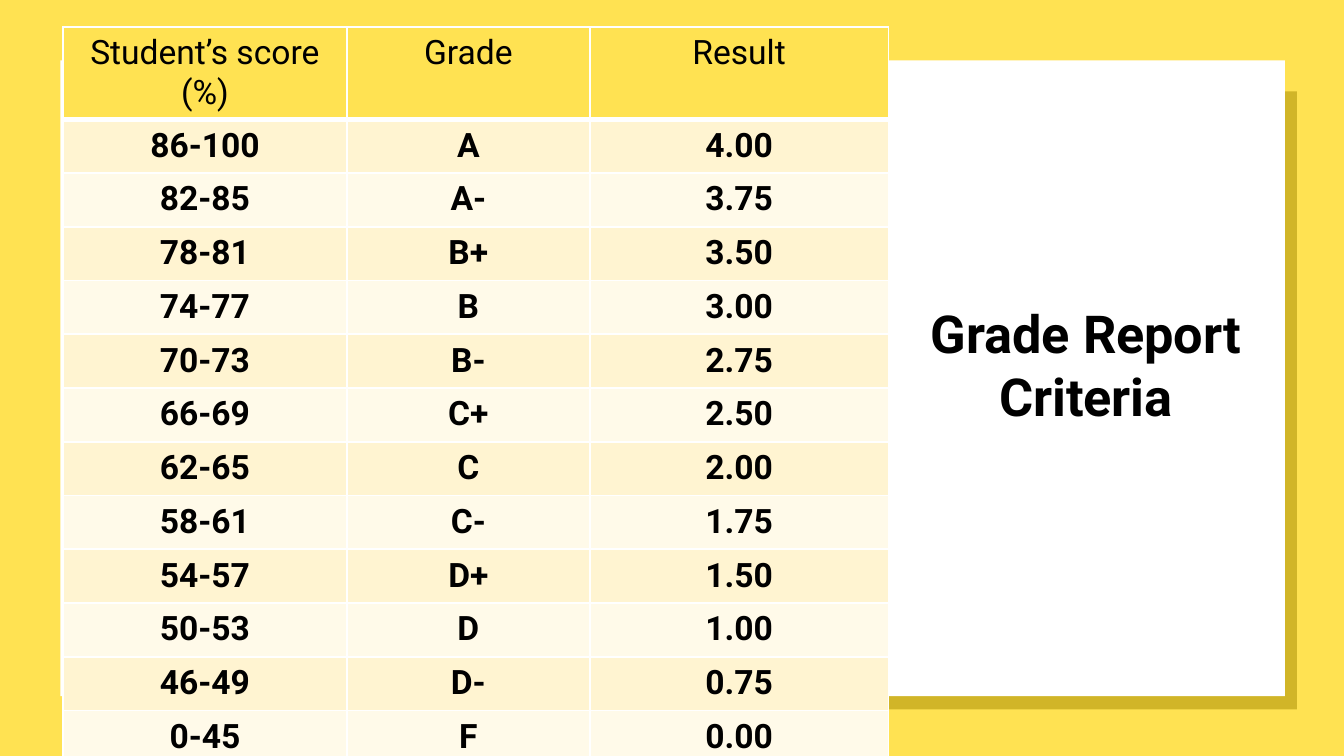
from lxml import etree
from pptx import Presentation
from pptx.dml.color import RGBColor
from pptx.enum.shapes import MSO_SHAPE
from pptx.enum.text import MSO_ANCHOR, PP_ALIGN
from pptx.oxml.ns import qn
from pptx.util import Inches, Pt

RECTANGLE = MSO_SHAPE.RECTANGLE
TOP = MSO_ANCHOR.TOP
CENTER = PP_ALIGN.CENTER

FONT = "Roboto"
YELLOW, SHADE, WHITE, BLACK = "FFE252", "D1B528", "FFFFFF", "000000"
BANDS = ("FFF4D1", "FFFAE9")
HEADER_BORDERS = {"L": 1, "R": 1, "T": 1, "B": 3}

COLUMNS = (2.11, 1.81, 2.22)
ROW_HEIGHT = 0.4
HEADER = ("Student’s score (%)", "Grade", "Result")
GRADES = (
    ("86-100", "A", "4.00"),
    ("82-85", "A-", "3.75"),
    ("78-81", "B+", "3.50"),
    ("74-77", "B", "3.00"),
    ("70-73", "B-", "2.75"),
    ("66-69", "C+", "2.50"),
    ("62-65", "C", "2.00"),
    ("58-61", "C-", "1.75"),
    ("54-57", "D+", "1.50"),
    ("50-53", "D", "1.00"),
    ("46-49", "D-", "0.75"),
    ("0-45", "F", "0.00"),
)


def paint(fill, color):
    """Make a fill solid in a hex colour."""
    fill.solid()
    fill.fore_color.rgb = RGBColor.from_string(color)


def write(tf, text, size=18, bold=False, color=BLACK, align=CENTER):
    """Put one formatted paragraph into a text frame."""
    p = tf.paragraphs[0]
    p.alignment = align
    r = p.add_run()
    r.text = text
    r.font.name = FONT
    r.font.size = Pt(size)
    r.font.bold = bold
    r.font.color.rgb = RGBColor.from_string(color)


def add_panel(slide, left, top, width, height, color):
    """Add a plain rectangle without outline or shadow."""
    sp = slide.shapes.add_shape(
        RECTANGLE, Inches(left), Inches(top), Inches(width), Inches(height))
    sp.shadow.inherit = False
    paint(sp.fill, color)
    sp.line.fill.background()


def set_borders(cell, widths, color=None):
    """Draw borders of the given widths by side, or hide them without a colour."""
    tc_pr = cell._tc.get_or_add_tcPr()
    for i, (side, width) in enumerate(widths.items()):
        ln = etree.Element(qn(f"a:ln{side}"), w=str(Pt(width)))
        if color:
            fill = etree.SubElement(ln, qn("a:solidFill"))
            etree.SubElement(fill, qn("a:srgbClr"), val=color)
        else:
            etree.SubElement(ln, qn("a:noFill"))
        tc_pr.insert(i, ln)


def fill_cell(cell, text, color, bold):
    """Set the text, fill and margins of a table cell."""
    cell.margin_left = cell.margin_right = Inches(0.07)
    cell.margin_top = cell.margin_bottom = Inches(0.05)
    paint(cell.fill, color)
    write(cell.text_frame, text, bold=bold)


def add_grades(slide, left, top):
    """Add the banded table of scores, grades and results."""
    rows = (HEADER, *GRADES)
    table = slide.shapes.add_table(
        len(rows), len(COLUMNS), Inches(left), Inches(top),
        Inches(sum(COLUMNS)), Inches(ROW_HEIGHT * len(rows))).table
    for column, width in zip(table.columns, COLUMNS):
        column.width = Inches(width)
    for i, row in enumerate(rows):
        table.rows[i].height = Inches(ROW_HEIGHT)
        color = BANDS[(i - 1) % 2] if i else YELLOW
        for j, text in enumerate(row):
            fill_cell(table.cell(i, j), text, color, bold=i > 0)
    for j in range(len(COLUMNS)):
        set_borders(table.cell(0, j), HEADER_BORDERS, WHITE)
        set_borders(table.cell(1, j), {"T": 0})


def place_title(slide, text, left, top, width, height):
    """Move the title placeholder to the front and fill it."""
    title = slide.shapes.title
    slide.shapes._spTree.append(title._element)
    title.left, title.top = Inches(left), Inches(top)
    title.width, title.height = Inches(width), Inches(height)
    tf = title.text_frame
    tf.word_wrap = True
    tf.vertical_anchor = TOP
    write(tf, text, size=28, bold=True)


def main():
    """Build the grade report slide."""
    prs = Presentation()
    prs.slide_width = Inches(10)
    prs.slide_height = prs.slide_width * 9 // 16
    slide = prs.slides.add_slide(prs.slide_layouts[5])
    paint(slide.background.fill, YELLOW)
    add_panel(slide, 0.65, 0.68, 9, 4.6, SHADE)
    add_panel(slide, 0.45, 0.45, 9.11, 4.73, WHITE)
    add_grades(slide, 0.47, 0.2)
    place_title(slide, "Grade Report Criteria", 6.6, 2.19, 2.96, 0.79)
    prs.save("out.pptx")


if __name__ == "__main__":
    main()
